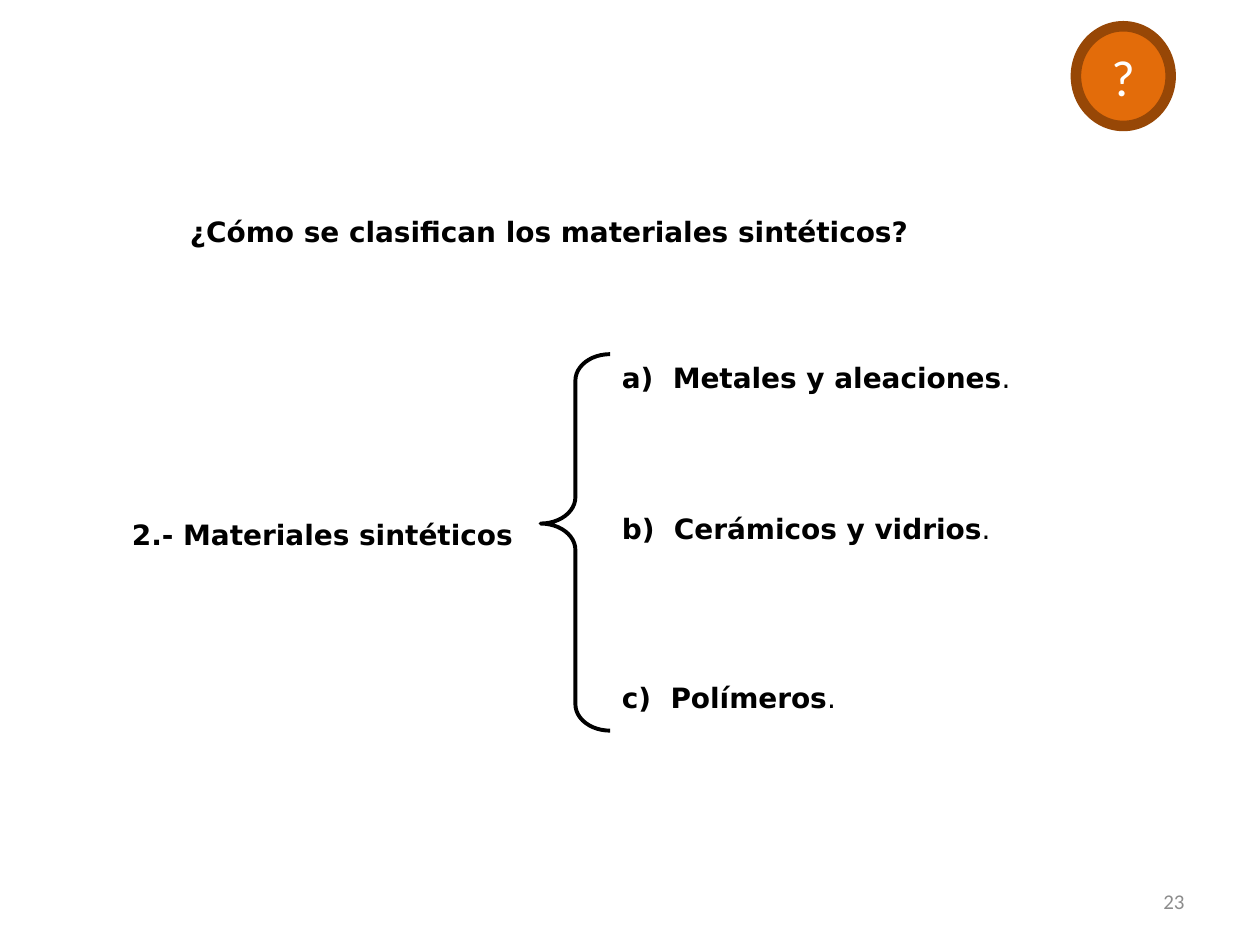
from lxml import etree
from pptx import Presentation
from pptx.dml.color import RGBColor
from pptx.enum.shapes import MSO_SHAPE
from pptx.enum.text import MSO_ANCHOR, MSO_AUTO_SIZE, PP_ALIGN
from pptx.oxml.ns import qn
from pptx.util import Cm, Pt

BRACE, OVAL = MSO_SHAPE.LEFT_BRACE, MSO_SHAPE.OVAL
MIDDLE = MSO_ANCHOR.MIDDLE
GROW = MSO_AUTO_SIZE.SHAPE_TO_FIT_TEXT
RIGHT, CENTER, JUSTIFY = PP_ALIGN.RIGHT, PP_ALIGN.CENTER, PP_ALIGN.JUSTIFY

BLACK = RGBColor(0x00, 0x00, 0x00)
WHITE = RGBColor(0xFF, 0xFF, 0xFF)
GRAY = RGBColor(0x8C, 0x8C, 0x8C)
ORANGE = RGBColor(0xE3, 0x6C, 0x0A)
BROWN = RGBColor(0x97, 0x47, 0x06)

BOLD = {"name": "DejaVu Sans", "size": Pt(16), "bold": True, "color": BLACK}
PLAIN = {**BOLD, "bold": False}
PAGE = {"name": "Calibri", "size": Pt(12), "color": GRAY}
MARK = {"name": "Calibri", "size": Pt(29), "color": WHITE}

ITEMS = [
    (" a)  Metales y aleaciones", 7.14, 8.81),
    (" b)  Cerámicos y vidrios", 10.19, 8.48),
    (" c)  Polímeros", 13.59, 5.36),
]


def apply(target, style):
    for key, value in style.items():
        if key == "color":
            target.color.rgb = value
        else:
            setattr(target, key, value)


def write(frame, runs, para=None):
    line = frame.paragraphs[0]
    apply(line, para or {})
    for text, font in runs:
        run = line.add_run()
        run.text = text
        apply(run.font, font)
    return line


def add_text(slide, area, runs, para=None, **frame):
    box = slide.shapes.add_textbox(*map(Cm, area))
    apply(box.text_frame, {"word_wrap": True, **frame})
    return write(box.text_frame, runs, para)


def add_tab(line, pos):
    tabs = etree.SubElement(line._p.get_or_add_pPr(), qn("a:tabLst"))
    etree.SubElement(tabs, qn("a:tab"), pos=str(Cm(pos)), algn="l")


def add_form(slide, kind, area, color, width, fill=None):
    form = slide.shapes.add_shape(kind, *map(Cm, area))
    form.shadow.inherit = False
    form.line.color.rgb = color
    form.line.width = Pt(width)
    if fill is None:
        form.fill.background()
    else:
        form.fill.solid()
        form.fill.fore_color.rgb = fill
    return form


def main():
    deck = Presentation()
    deck.slide_width, deck.slide_height = Cm(25.4), Cm(19.05)
    slide = deck.slides.add_slide(deck.slide_layouts[6])

    add_text(slide, (18.21, 17.65, 5.92, 1.02), [("23", PAGE)],
             {"alignment": RIGHT}, vertical_anchor=MIDDLE)
    add_text(slide, (3.58, 4.32, 18.8, 1.4),
             [("¿Cómo se clasifican los materiales sintéticos?", BOLD)],
             {"line_spacing": Pt(15.6)}, auto_size=GROW)
    topic = add_text(slide, (2.41, 9.98, 8.2, 1.27),
                     [("2.- Materiales sintéticos", BOLD)],
                     {"alignment": JUSTIFY, "line_spacing": 1.5},
                     auto_size=GROW, word_wrap=False)
    apply_indent = {"marL": str(Cm(0.97)), "indent": str(Cm(-0.97))}
    for key, value in apply_indent.items():
        topic._p.get_or_add_pPr().set(key, value)
    add_tab(topic, 1.27)

    for text, top, width in ITEMS:
        add_text(slide, (12.09, top, width, 0.94),
                 [(text, BOLD), (".", PLAIN)],
                 auto_size=GROW, word_wrap=False)

    brace = add_form(slide, BRACE, (10.9, 7.14, 1.4, 7.59), BLACK, 2.25)
    brace.adjustments[0], brace.adjustments[1] = 0.38, 0.45
    badge = add_form(slide, OVAL, (21.69, 0.53, 1.91, 2.01), BROWN, 6, ORANGE)
    badge.text_frame.vertical_anchor = MIDDLE
    write(badge.text_frame, [("?", MARK)],
          {"alignment": CENTER, "space_after": Pt(10)})

    deck.save("out.pptx")


if __name__ == "__main__":
    main()
